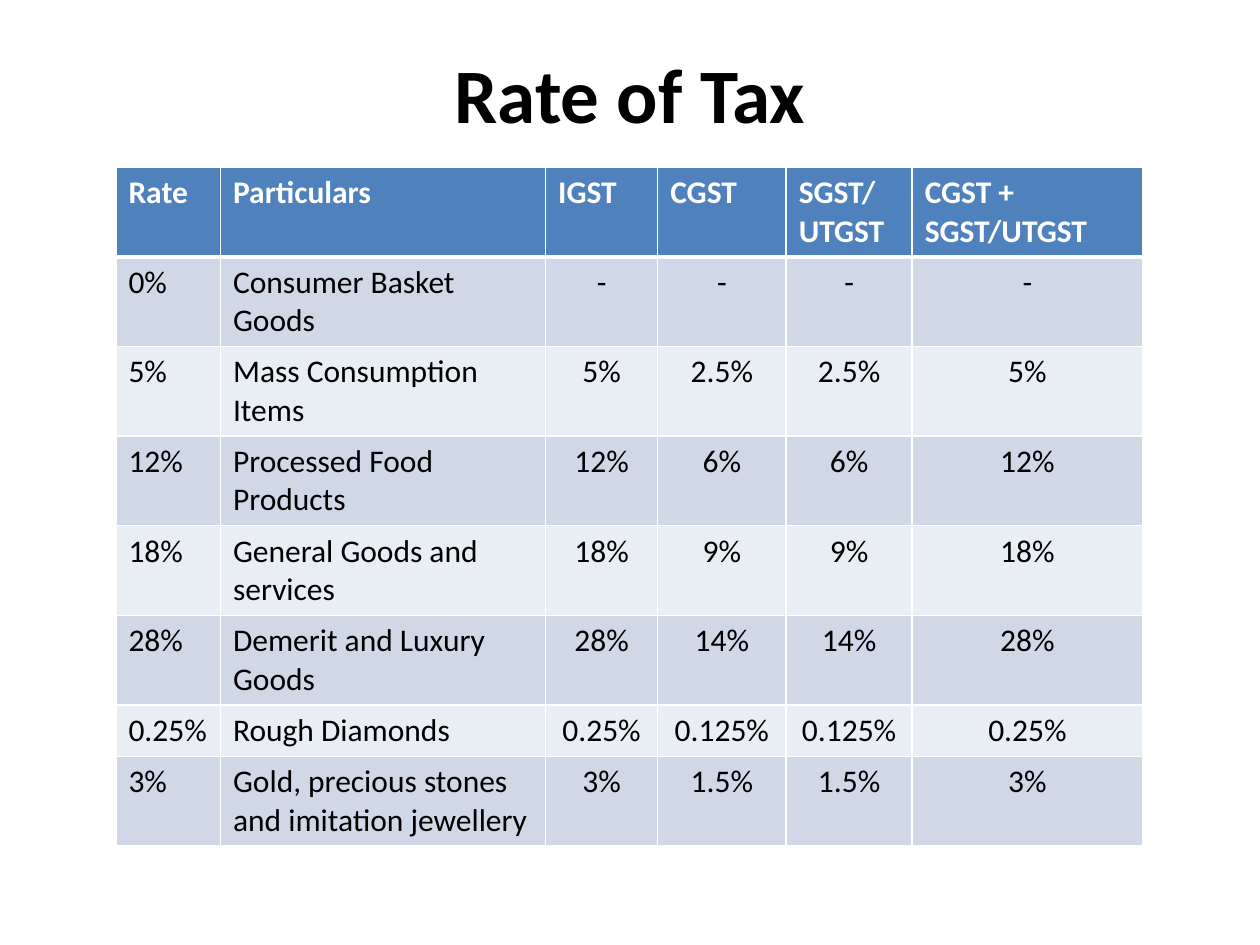
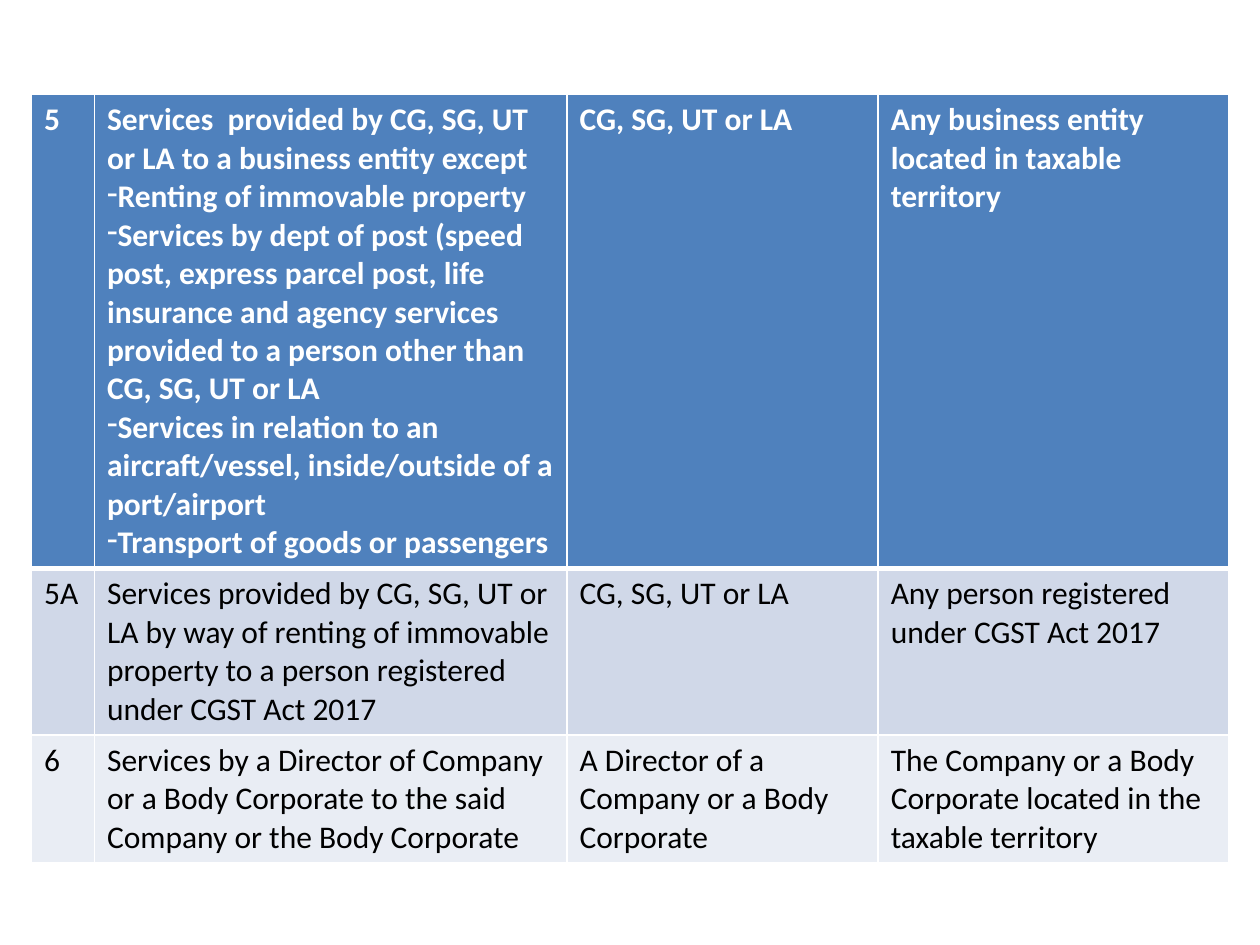
from dataclasses import dataclass

from lxml.etree import SubElement
from pptx import Presentation
from pptx.dml.color import RGBColor
from pptx.enum.text import MSO_ANCHOR, PP_ALIGN
from pptx.oxml.ns import qn
from pptx.slide import Slide
from pptx.table import _Cell
from pptx.text.text import TextFrame, _Paragraph
from pptx.util import Inches, Pt

COLORS = {"header": "4F81BD", "odd": "D0D8E8", "even": "E9EDF4",
          "white": "FFFFFF", "black": "000000"}
FONT = "Calibri"
TITLE_ONLY, BLANK = 5, 6
ROW_HEIGHT = 0.41
THIN, THICK = 1, 3
DASH = "-"


@dataclass(frozen=True)
class TableSpec:
    """A table whose first row is the header; lengths are in inches."""
    left: float
    top: float
    height: float
    columns: tuple[float, ...]
    rows: tuple[tuple[str, ...], ...]
    first_centered: int


RATES = TableSpec(
    left=0.92, top=1.33, height=5.31,
    columns=(0.83, 2.58, 0.89, 1.02, 1, 1.83),
    first_centered=2,
    rows=(
        ("Rate", "Particulars", "IGST", "CGST", "SGST/UTGST", "CGST + SGST/UTGST"),
        ("0%", "Consumer Basket Goods", "-", "-", "-", "-"),
        ("5%", "Mass Consumption Items", "5%", "2.5%", "2.5%", "5%"),
        ("12%", "Processed Food Products", "12%", "6%", "6%", "12%"),
        ("18%", "General Goods and services", "18%", "9%", "9%", "18%"),
        ("28%", "Demerit and Luxury Goods", "28%", "14%", "14%", "28%"),
        ("0.25%", "Rough Diamonds", "0.25%", "0.125%", "0.125%", "0.25%"),
        ("3%", "Gold, precious stones and imitation jewellery",
         "3%", "1.5%", "1.5%", "3%"),
    ),
)

# In a cell, each line after the first is a dashed list item.
SERVICES = TableSpec(
    left=0.25, top=0.75, height=6,
    columns=(0.5, 3.75, 2.47, 2.78),
    first_centered=4,
    rows=(
        ("5",
         "Services  provided by CG, SG, UT or LA to a business entity except\n"
         "Renting of immovable property\n"
         "Services by dept of post (speed post, express parcel post, life insurance "
         "and agency services provided to a person other than CG, SG, UT or LA\n"
         "Services in relation to an aircraft/vessel, inside/outside of a port/airport\n"
         "Transport of goods or passengers",
         "CG, SG, UT or LA",
         "Any business entity located in taxable territory"),
        ("5A",
         "Services provided by CG, SG, UT or LA by way of renting of immovable "
         "property to a person registered under CGST Act 2017",
         "CG, SG, UT or LA",
         "Any person registered under CGST Act 2017"),
        ("6",
         "Services by a Director of Company or a Body Corporate to the said "
         "Company or the Body Corporate",
         "A Director of a Company or a Body Corporate",
         "The Company or a Body Corporate located in the taxable territory"),
    ),
)


def add_dash(para: _Paragraph) -> None:
    properties = para._p.get_or_add_pPr()
    properties.set("marL", "0")
    properties.set("indent", "0")
    SubElement(properties, qn("a:buFontTx"))
    SubElement(properties, qn("a:buChar"), char=DASH)


def write_text(frame: TextFrame, text: str, *, size: float = 18, bold: bool = False,
               color: str = "black", align: PP_ALIGN = PP_ALIGN.LEFT) -> None:
    """Write one paragraph per line, with a dash before every line but the first."""
    for index, line in enumerate(text.split("\n")):
        para = frame.add_paragraph() if index else frame.paragraphs[0]
        para.alignment = align
        if index:
            add_dash(para)
        span = para.add_run()
        span.text = line
        span.font.name = FONT
        span.font.size = Pt(size)
        span.font.bold = bold
        span.font.color.rgb = RGBColor.from_string(COLORS[color])


def set_borders(cell: _Cell, top: float, bottom: float) -> None:
    properties = cell._tc.get_or_add_tcPr()
    widths = {"a:lnL": THIN, "a:lnR": THIN, "a:lnT": top, "a:lnB": bottom}
    for side, width in widths.items():
        line = SubElement(properties, qn(side), w=str(Pt(width)))
        fill = SubElement(line, qn("a:solidFill"))
        SubElement(fill, qn("a:srgbClr"), val=COLORS["white"])


def add_grid(slide: Slide, spec: TableSpec) -> None:
    frame = slide.shapes.add_table(
        len(spec.rows), len(spec.columns), Inches(spec.left), Inches(spec.top),
        Inches(sum(spec.columns)), Inches(spec.height))
    table = frame.table
    for column, width in zip(table.columns, spec.columns):
        column.width = Inches(width)
    for row_index, texts in enumerate(spec.rows):
        table.rows[row_index].height = Inches(ROW_HEIGHT)
        is_header = row_index == 0
        band = "header" if is_header else "odd" if row_index % 2 else "even"
        for column_index, text in enumerate(texts):
            cell = table.cell(row_index, column_index)
            set_borders(cell, top=THICK if row_index == 1 else THIN,
                        bottom=THICK if is_header else THIN)
            cell.fill.solid()
            cell.fill.fore_color.rgb = RGBColor.from_string(COLORS[band])
            centered = not is_header and column_index >= spec.first_centered
            write_text(cell.text_frame, text, bold=is_header,
                       color="white" if is_header else "black",
                       align=PP_ALIGN.CENTER if centered else PP_ALIGN.LEFT)
    frame.height = Inches(spec.height)


def add_title(slide: Slide, text: str) -> None:
    title = slide.shapes.title
    title.left, title.top = Inches(0.5), Inches(0.3)
    title.width, title.height = Inches(9), Inches(0.87)
    title.text_frame.vertical_anchor = MSO_ANCHOR.MIDDLE
    write_text(title.text_frame, text, size=44, bold=True, align=PP_ALIGN.CENTER)


def main() -> None:
    deck = Presentation()
    deck.slide_width, deck.slide_height = Inches(10), Inches(7.5)

    rate_page = deck.slides.add_slide(deck.slide_layouts[TITLE_ONLY])
    add_title(rate_page, "Rate of Tax")
    add_grid(rate_page, RATES)

    service_page = deck.slides.add_slide(deck.slide_layouts[BLANK])
    add_grid(service_page, SERVICES)

    deck.save("out.pptx")


if __name__ == "__main__":
    main()
